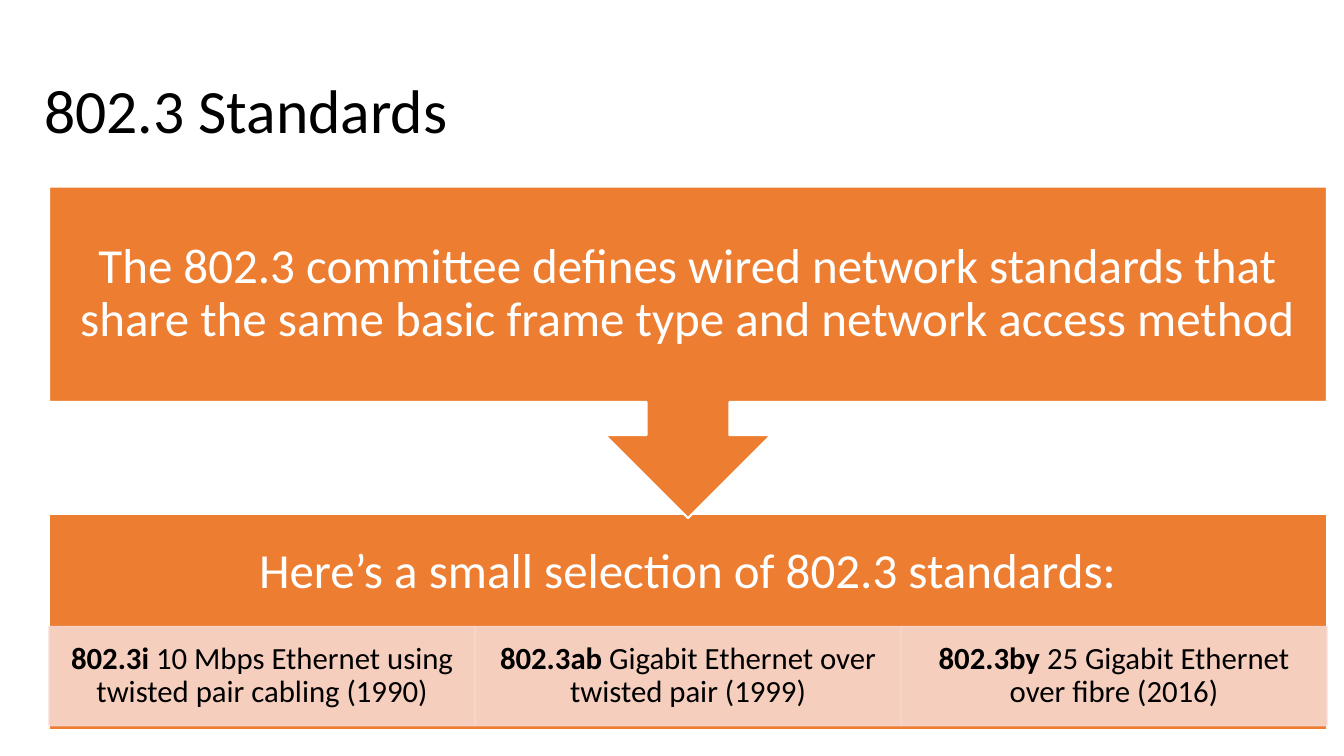
from lxml.etree import SubElement
from pptx import Presentation
from pptx.dml.color import RGBColor
from pptx.enum.shapes import MSO_SHAPE as Kind
from pptx.enum.text import MSO_ANCHOR as Anchor, PP_ALIGN as Align
from pptx.oxml.ns import qn
from pptx.util import Pt

ORANGE, PINK, WHITE, BLACK = "ED7D31", "F8D7CE", "FFFFFF", "000000"
CELLS = [
    ("802.3i ", "10 Mbps Ethernet using twisted pair cabling (1990)"),
    ("802.3ab ", "Gigabit Ethernet over twisted pair (1999)"),
    ("802.3by ", "25 Gigabit Ethernet over fibre (2016)"),
]


def paint(target, color):
    target.rgb = RGBColor.from_string(color)


def fade(fill, share):
    """Make a solid fill partly transparent."""
    color = fill.fore_color
    node = fill._xPr.find(qn("a:solidFill"))[0]
    SubElement(node, qn("a:alpha"), val=str(share * 1000))
    return color


def write(shape, runs, size, color, align, pads):
    """Fill a shape with one paragraph of (text, bold) runs."""
    frame = shape.text_frame
    left, top, right, bottom = map(Pt, pads)
    look = dict(word_wrap=True, vertical_anchor=Anchor.MIDDLE, margin_left=left,
                margin_top=top, margin_right=right, margin_bottom=bottom)
    for name, value in look.items():
        setattr(frame, name, value)
    para = frame.paragraphs[0]
    para.alignment, para.line_spacing = align, 0.9
    for text, bold in runs:
        run = para.add_run()
        run.text = text
        for name, value in dict(name="Calibri", size=Pt(size), bold=bold).items():
            setattr(run.font, name, value)
        paint(run.font.color, color)


def block(slide, kind, box, fill, edge, width):
    shape = slide.shapes.add_shape(kind, *map(Pt, box))
    shape.shadow.inherit = False
    shape.fill.solid()
    paint(shape.fill.fore_color, fill)
    paint(shape.line.color, edge)
    shape.line.width = Pt(width)
    return shape


def title(slide, box):
    shape = slide.shapes.add_textbox(*map(Pt, box))
    write(shape, [("802.3 Standards", False)], 44, BLACK, Align.LEFT,
          (7.2, 3.6, 7.2, 3.6))


def panel(slide, box):
    """Lower block: a heading above a row of equal cells."""
    left, top, width, height = box
    shape = block(slide, Kind.RECTANGLE, box, ORANGE, WHITE, 1.5)
    write(shape, [("Here’s a small selection of 802.3 standards:", False)],
          35, WHITE, Align.CENTER, (19.4, 19.4, 19.4, 90.7))
    step = width / len(CELLS)
    for i, (code, note) in enumerate(CELLS):
        spot = (left + i * step, top + 0.52 * height, step, 0.46 * height)
        cell = block(slide, Kind.RECTANGLE, spot, PINK, PINK, 1)
        for fill in (cell.fill, cell.line.fill):
            fade(fill, 90)
        write(cell, [(code, True), (note, False)], 22, BLACK, Align.CENTER,
              (12.2, 2.2, 12.2, 2.2))


def callout(slide, box):
    shape = block(slide, Kind.DOWN_ARROW_CALLOUT, box, ORANGE, WHITE, 1.5)
    for i, value in enumerate((0.25, 0.25, 0.25, 0.65)):
        shape.adjustments[i] = value
    write(shape, [("The 802.3 committee defines wired network standards that "
                   "share the same basic frame type and network access method",
                   False)], 35, WHITE, Align.CENTER, (19.4,) * 4)


def main():
    deck = Presentation()
    deck.slide_width, deck.slide_height = Pt(960), Pt(540)
    slide = deck.slides.add_slide(deck.slide_layouts[6])
    title(slide, (24.5, 28.8, 913, 104.4))
    panel(slide, (35.1, 367.4, 912.7, 154))
    callout(slide, (35.1, 133.2, 912.7, 236.9))
    deck.save("out.pptx")


if __name__ == "__main__":
    main()
